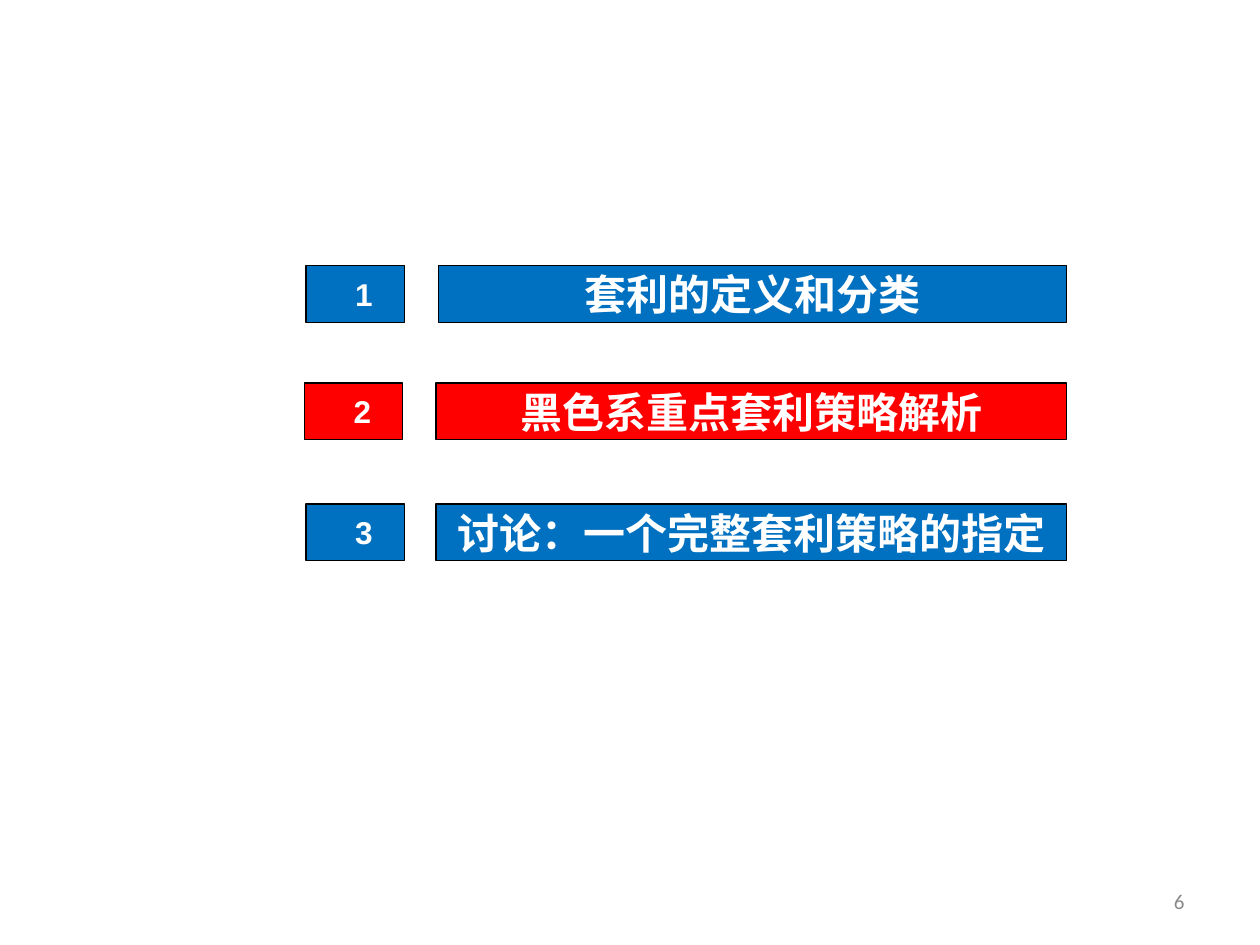
from dataclasses import dataclass

import pptx
import pptx.dml.color
import pptx.enum.shapes
import pptx.enum.text
import pptx.util
from pptx.util import Cm


@dataclass(frozen=True)
class Theme:
    topic: str = "0070C0"
    current: str = "FF0000"
    border: str = "000000"
    label: str = "FFFFFF"
    page: str = "898989"
    font: str = "Arial"
    page_font: str = "Calibri"
    number_size: int = 18
    title_size: int = 24
    page_size: int = 12
    border_width: float = 0.75


THEME = Theme()
ROW_HEIGHT = 1.14
NUMBER_WIDTH = 1.98
TITLE_RIGHT = 21.5

# top, number left, title left, title, fill (cm)
AGENDA = [
    (5.36, 6.17, 8.84, "套利的定义和分类", THEME.topic),
    (7.72, 6.14, 8.79, "黑色系重点套利策略解析", THEME.current),
    (10.16, 6.17, 8.79, "讨论：一个完整套利策略的指定", THEME.topic),
]


def rgb(value):
    return pptx.dml.color.RGBColor.from_string(value)


def write(frame, text, size, color, font, align, bold=False):
    frame.vertical_anchor = pptx.enum.text.MSO_ANCHOR.MIDDLE
    paragraph = frame.paragraphs[0]
    paragraph.alignment = align
    run = paragraph.add_run()
    run.text = text
    run.font.size = pptx.util.Pt(size)
    run.font.name = font
    run.font.bold = bold
    run.font.color.rgb = rgb(color)


def add_bar(shapes, left, top, width, text, size, fill):
    bar = shapes.add_shape(
        pptx.enum.shapes.MSO_SHAPE.RECTANGLE,
        Cm(left), Cm(top), Cm(width), Cm(ROW_HEIGHT),
    )
    bar.shadow.inherit = False
    bar.fill.solid()
    bar.fill.fore_color.rgb = rgb(fill)
    bar.line.color.rgb = rgb(THEME.border)
    bar.line.width = pptx.util.Pt(THEME.border_width)
    frame = bar.text_frame
    frame.margin_top = frame.margin_bottom = 0
    frame.word_wrap = True
    write(frame, text, size, THEME.label, THEME.font,
          pptx.enum.text.PP_ALIGN.CENTER, bold=True)
    return bar


def add_agenda_row(slide, number, top, number_left, title_left, title, fill):
    shapes = slide.shapes.add_group_shape().shapes
    number_bar = add_bar(shapes, number_left, top, NUMBER_WIDTH,
                         str(number), THEME.number_size, fill)
    number_bar.text_frame.margin_left = Cm(0.6)
    add_bar(shapes, title_left, top, TITLE_RIGHT - title_left,
            title, THEME.title_size, fill)


def add_page_number(slide, number):
    page = slide.shapes.add_textbox(Cm(18.2), Cm(17.65), Cm(5.93), Cm(1.02))
    page.text_frame.word_wrap = True
    write(page.text_frame, str(number), THEME.page_size, THEME.page,
          THEME.page_font, pptx.enum.text.PP_ALIGN.RIGHT)


def main():
    deck = pptx.Presentation()
    deck.slide_width, deck.slide_height = Cm(25.4), Cm(19.05)
    slide = deck.slides.add_slide(deck.slide_layouts[6])
    add_page_number(slide, 6)
    for number, row in enumerate(AGENDA, start=1):
        add_agenda_row(slide, number, *row)
    deck.save("out.pptx")


if __name__ == "__main__":
    main()
